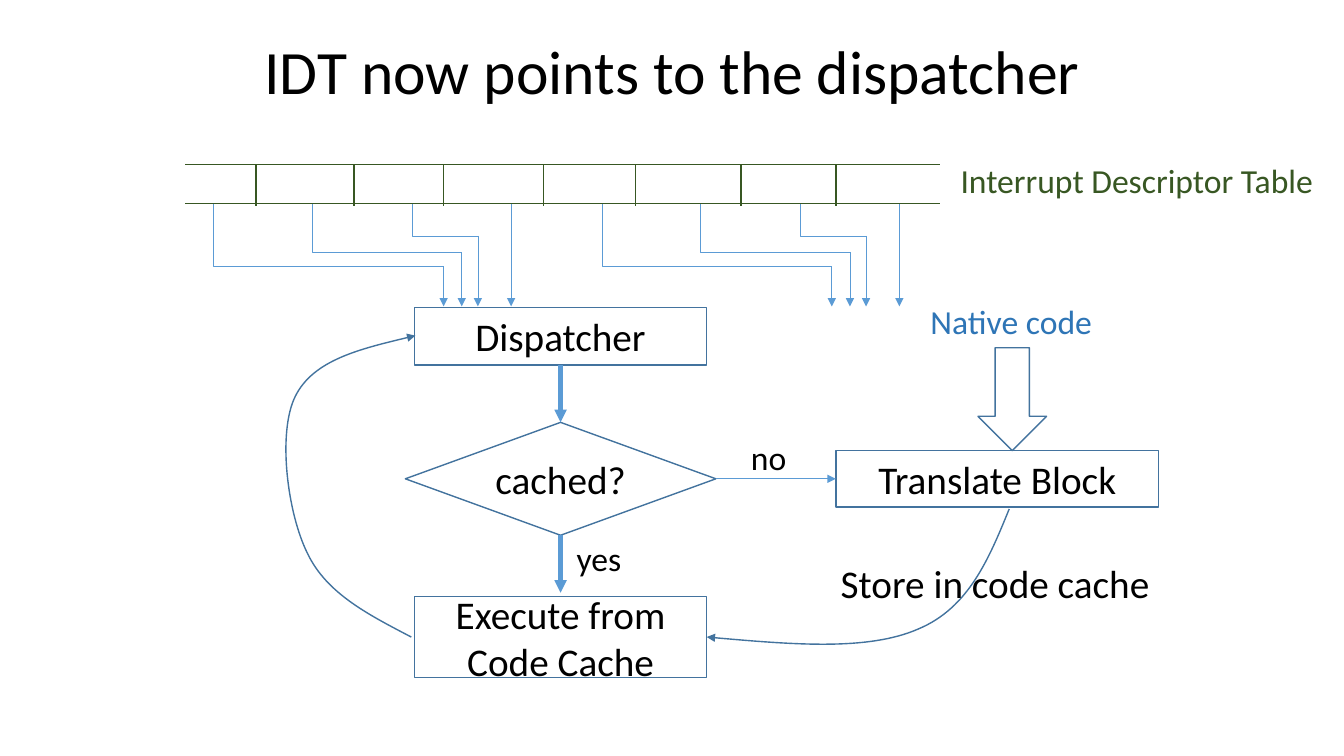
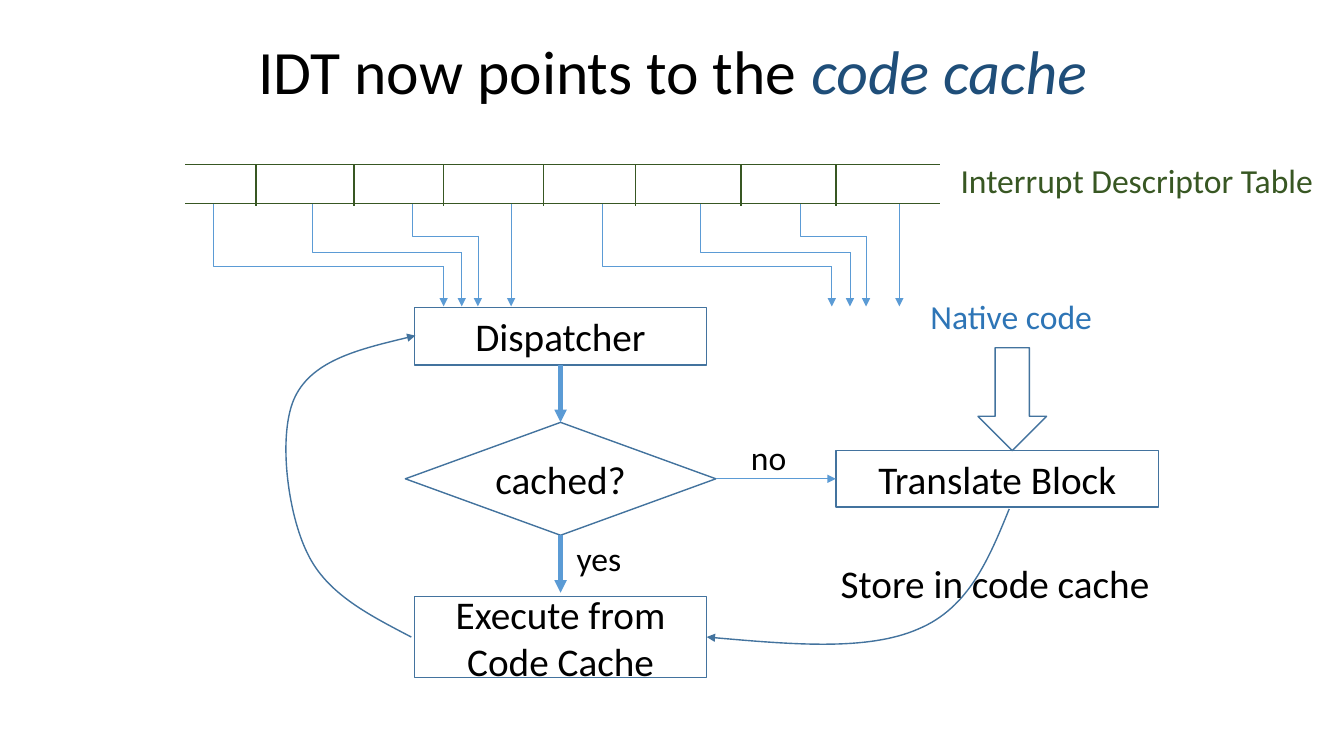
from lxml import etree
from pptx import Presentation
from pptx.dml.color import RGBColor
from pptx.enum.shapes import MSO_CONNECTOR, MSO_SHAPE
from pptx.enum.text import MSO_ANCHOR, MSO_AUTO_SIZE, PP_ALIGN
from pptx.oxml.ns import qn
from pptx.util import Inches, Pt

STRAIGHT, ELBOW = MSO_CONNECTOR.STRAIGHT, MSO_CONNECTOR.ELBOW
RECTANGLE, DECISION = MSO_SHAPE.RECTANGLE, MSO_SHAPE.FLOWCHART_DECISION
DOWN_ARROW = MSO_SHAPE.DOWN_ARROW
MIDDLE = MSO_ANCHOR.MIDDLE
NO_FIT, GROW = MSO_AUTO_SIZE.NONE, MSO_AUTO_SIZE.SHAPE_TO_FIT_TEXT
LEFT, CENTER = PP_ALIGN.LEFT, PP_ALIGN.CENTER
TOP_SIDE, LEFT_SIDE, BOTTOM_SIDE, RIGHT_SIDE = range(4)

FONT = "Calibri"
BLACK, GREEN = "000000", "385723"
OUTLINE, ARROW, NATIVE, EMPHASIS = "43739E", "5B9BD5", "2E75B6", "1F4E79"

# Descriptor table and the two fans of arrows below it
TABLE_LEFT, TABLE_RIGHT, TABLE_TOP, TABLE_BOTTOM = 1.84, 9.32, 1.63, 2.02
DIVIDERS = [2.54, 3.51, 4.4, 5.39, 6.3, 7.35, 8.29]
FAN_STARTS = [2.12, 3.1, 4.09, 5.07]
FAN_ENDS = [4.4, 4.58, 4.74, 5.07]
FAN_BENDS = [2.64, 2.5, 2.34, TABLE_BOTTOM]
FAN_BOTTOM, FAN_SHIFT = 3.04, 3.85

# Curves: start point, then control, control and end point for each piece
BACK_CURVE = [(4.08, 6.32), (3.66, 6.1), (3.24, 5.89), (3.05, 5.49),
              (2.85, 5.09), (2.75, 4.29), (2.93, 3.93),
              (3.11, 3.57), (3.62, 3.45), (4.12, 3.33)]
STORE_CURVE = [(10.01, 5.05), (9.81, 5.54), (9.61, 6.03), (9.11, 6.24),
               (8.61, 6.46), (7.81, 6.39), (7.01, 6.32)]


def color(value):
    return RGBColor.from_string(value)


class SlideBuilder:
    """Holds the deck, the current page and the shared style."""

    def __init__(self):
        self.deck = Presentation()
        self.deck.slide_width, self.deck.slide_height = Inches(13.33), Inches(7.5)
        self.page = None

    def new_page(self, title_spans):
        self.page = self.deck.slides.add_slide(self.deck.slide_layouts[5])
        title = self.page.shapes.title
        title.left, title.top = Inches(0.92), Inches(0.01)
        title.width, title.height = Inches(11.5), Inches(1.45)
        frame = title.text_frame
        frame.word_wrap, frame.auto_size = True, NO_FIT
        frame.vertical_anchor = MIDDLE
        para = frame.paragraphs[0]
        para.alignment, para.line_spacing = CENTER, 0.9
        for text, text_color, italic in title_spans:
            span = para.add_run()
            span.text = text
            self.style_span(span, 44, text_color)
            span.font.italic = italic

    def style_span(self, span, size, text_color):
        span.font.name, span.font.size = FONT, Pt(size)
        span.font.color.rgb = color(text_color)

    def style_text(self, frame, size, text_color, alignment):
        for para in frame.paragraphs:
            para.alignment = alignment
            for span in para.runs:
                self.style_span(span, size, text_color)

    def style_line(self, shape, line_color, width, arrow=False):
        shape.line.color.rgb = color(line_color)
        shape.line.width = Pt(width)
        if arrow:
            line = shape.line._get_or_add_ln()
            etree.SubElement(line, qn("a:tailEnd"), type="triangle")

    def box(self, kind, left, top, width, height, text=""):
        box = self.page.shapes.add_shape(
            kind, Inches(left), Inches(top), Inches(width), Inches(height))
        box.shadow.inherit = False
        box.fill.background()
        self.style_line(box, OUTLINE, 1)
        if text:
            frame = box.text_frame
            frame.text = text
            frame.vertical_anchor = MIDDLE
            self.style_text(frame, 28, BLACK, CENTER)
        return box

    def label(self, text, left, top, width, height=0.5, size=24,
              text_color=BLACK, wrap=False, alignment=LEFT):
        box = self.page.shapes.add_textbox(
            Inches(left), Inches(top), Inches(width), Inches(height))
        frame = box.text_frame
        frame.text = text
        frame.word_wrap, frame.auto_size = wrap, GROW
        self.style_text(frame, size, text_color, alignment)

    def line(self, x1, y1, x2, y2, line_color=ARROW, width=0.5,
             arrow=False, kind=STRAIGHT):
        line = self.page.shapes.add_connector(
            kind, Inches(x1), Inches(y1), Inches(x2), Inches(y2))
        self.style_line(line, line_color, width, arrow)
        etree.SubElement(line._element.spPr, qn("a:effectLst"))
        return line

    def elbow(self, x1, y1, x2, y2):
        """Goes down, then right: a mirrored one-bend connector, turned by 270°."""
        across, down = x2 - x1, y2 - y1
        left, top = x1 + (across - down) / 2, y1 + (down - across) / 2
        bend = self.line(left + down, top, left, top + across, kind=ELBOW)
        properties = bend._element.spPr
        properties.find(qn("a:prstGeom")).set("prst", "bentConnector2")
        properties.find(qn("a:xfrm")).set("rot", "16200000")

    def curve(self, points, height):
        """Turns each three straight steps of a freeform into one Bézier piece."""
        emu_points = [(Inches(x), Inches(y)) for x, y in points]
        builder = self.page.shapes.build_freeform(*emu_points[0])
        builder.add_line_segments(emu_points[1:], close=False)
        curve = builder.convert_to_shape()
        outline = next(curve._element.iter(qn("a:path")))
        steps = outline.findall(qn("a:lnTo"))
        for start in range(0, len(steps), 3):
            piece = etree.SubElement(outline, qn("a:cubicBezTo"))
            for step in steps[start:start + 3]:
                piece.append(step[0])
                outline.remove(step)
        # The frame fits the curve, not its control points
        curve.height = Inches(height)
        outline.set("h", str(curve.height))
        curve.shadow.inherit = False
        curve.fill.background()
        self.style_line(curve, OUTLINE, 1, arrow=True)

    def flowchart(self, native_top):
        dispatcher = self.box(RECTANGLE, 4.11, 3.05, 2.9, 0.57, "Dispatcher")
        cached = self.box(DECISION, 4.02, 4.19, 3.08, 1.12, "cached?")
        self.box(RECTANGLE, 4.11, 5.92, 2.9, 0.8, "Execute from\nCode Cache")
        translate = self.box(RECTANGLE, 8.29, 4.47, 3.2, 0.56, "Translate Block")
        self.box(DOWN_ARROW, 9.7, 3.45, 0.68, 1.02)

        # Arrows between the steps
        check = self.line(5.56, 3.62, 5.56, 4.19, width=3, arrow=True)
        check.begin_connect(dispatcher, BOTTOM_SIDE)
        check.end_connect(cached, TOP_SIDE)
        hit = self.line(5.56, 5.31, 5.56, 5.88, width=3, arrow=True)
        hit.begin_connect(cached, BOTTOM_SIDE)
        miss = self.line(7.1, 4.75, 8.29, 4.75, arrow=True)
        miss.begin_connect(cached, RIGHT_SIDE)
        miss.end_connect(translate, LEFT_SIDE)
        self.curve(BACK_CURVE, 2.99)
        self.curve(STORE_CURVE, 1.34)

        # Labels
        self.label("Native code", 9.13, native_top, 1.82, text_color=NATIVE)
        self.label("Store in code cache", 8.24, 5.5, 3.3, 0.57, size=28)
        self.label("no", 7.35, 4.29, 0.56)
        self.label("yes", 5.62, 5.29, 0.65)

    def descriptor_table(self):
        # Arrows from the entries
        for shift in (0, FAN_SHIFT):
            for start, end, bend in zip(FAN_STARTS, FAN_ENDS, FAN_BENDS):
                if start != end:
                    self.elbow(start + shift, TABLE_BOTTOM, end + shift, bend)
                self.line(end + shift, bend, end + shift, FAN_BOTTOM, arrow=True)
        # Frame and dividers
        for y in (TABLE_BOTTOM, TABLE_TOP):
            self.line(TABLE_LEFT, y, TABLE_RIGHT, y, GREEN, 1)
        for x in DIVIDERS:
            self.line(x, TABLE_TOP, x, TABLE_BOTTOM + 0.02, GREEN, 1)
        self.label("Interrupt Descriptor Table", 9.39, 1.54, 3.77,
                   text_color=GREEN, wrap=True, alignment=CENTER)


def main():
    slides = [
        ([("IDT now points to the dispatcher", BLACK, False)], 2.94),
        ([("IDT now points to the ", BLACK, False),
          ("code cache", EMPHASIS, True)], 2.89),
    ]
    builder = SlideBuilder()
    for title_spans, native_top in slides:
        builder.new_page(title_spans)
        builder.flowchart(native_top)
        builder.descriptor_table()
    builder.deck.save("out.pptx")


if __name__ == "__main__":
    main()
